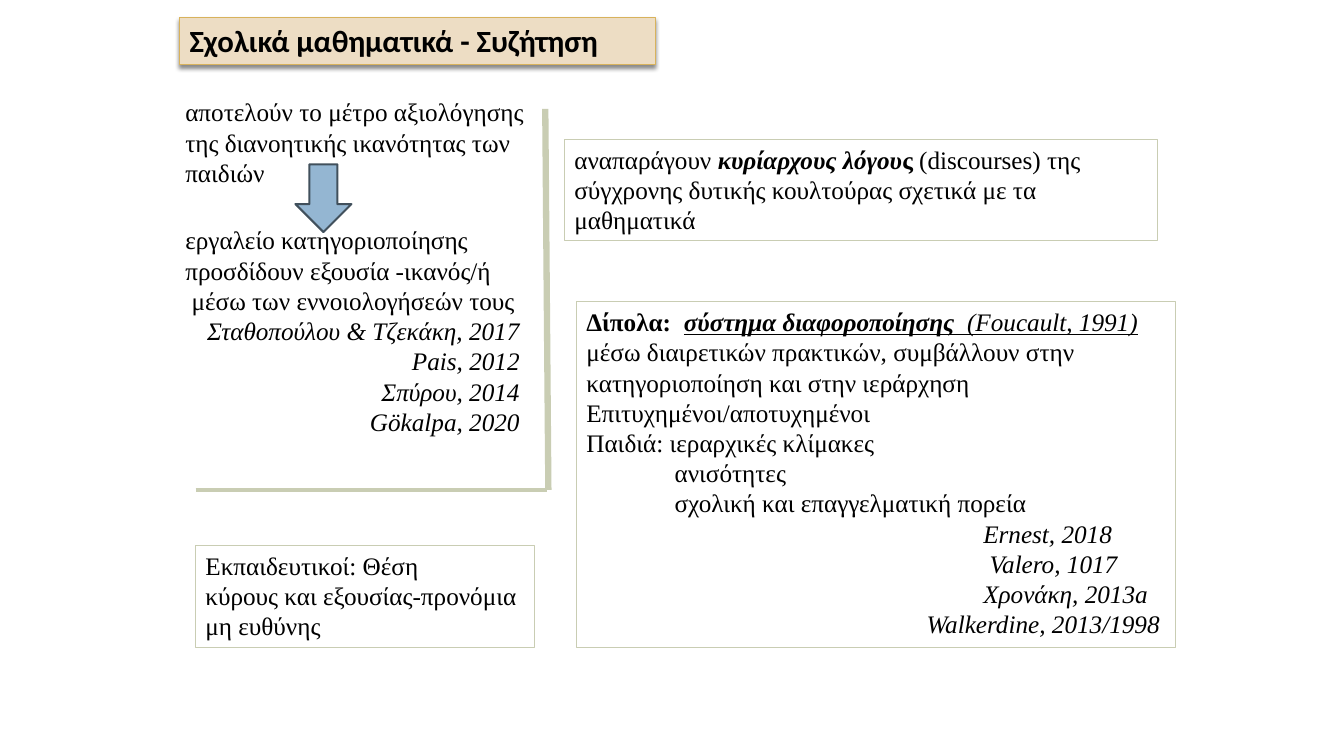
from lxml.etree import SubElement as Sub
from pptx import Presentation
from pptx.dml.color import RGBColor as RGB
from pptx.enum.shapes import MSO_CONNECTOR as LINK, MSO_SHAPE as SHAPE
from pptx.enum.text import MSO_ANCHOR as ANCHOR, MSO_AUTO_SIZE as FIT, PP_ALIGN as ALIGN
from pptx.oxml.ns import qn
from pptx.util import Pt

HUES = {k: RGB.from_string(v) for k, v in {
    "ink": "000000", "sand": "EDDDC4", "gold": "D8B25C",
    "sage": "C9CDB3", "blue": "94B6D2", "slate": "41505C"}.items()}
FLAGS = {"b": "bold", "i": "italic", "u": "underline"}


def write(par, runs, face="Times New Roman", size=18):
    """Add (text, flags) runs, where flags is a mix of b, i and u."""
    for text, flags in runs:
        run = par.add_run()
        run.text = text
        look = {"name": face, "size": Pt(size)}
        look.update({name: key in flags for key, name in FLAGS.items()})
        for name, value in look.items():
            setattr(run.font, name, value)
        run.font.color.rgb = HUES["ink"]


def edge(line, hue, width):
    line.color.rgb = HUES[hue]
    line.width = Pt(width)


deck = Presentation()
deck.slide_width, deck.slide_height = Pt(960), Pt(540)
slide = deck.slides.add_slide(deck.slide_layouts[5])

# Title bar with a soft shadow
title = slide.shapes.title
title.left, title.top, title.width, title.height = map(Pt, (128.2, 12.2, 339.8, 33.8))
title.fill.solid()
title.fill.fore_color.rgb = HUES["sand"]
edge(title.line, "gold", 0.79)
frame = title.text_frame
frame.auto_size, frame.vertical_anchor = FIT.NONE, ANCHOR.TOP
frame.paragraphs[0].alignment = ALIGN.LEFT
write(frame.paragraphs[0], [("Σχολικά μαθηματικά - Συζήτηση", "b")], "Calibri", 22)
glow = Sub(Sub(title.element.spPr, qn("a:effectLst")), qn("a:outerShdw"),
           blurRad=str(Pt(3)), dist=str(Pt(2.4)), dir="5400000", rotWithShape="0")
tone = Sub(glow, qn("a:srgbClr"), val=str(HUES["ink"]))
Sub(tone, qn("a:alpha"), val="45000")

# Down arrow between the two left-hand texts
arrow = slide.shapes.add_shape(SHAPE.DOWN_ARROW, *map(Pt, (211, 117.4, 40, 48.4)))
arrow.shadow.inherit = False
arrow.fill.solid()
arrow.fill.fore_color.rgb = HUES["blue"]
edge(arrow.line, "slate", 1.5)

# Text boxes: place, framed, paragraphs of (indent or "right", runs)
boxes = [
    ((125.3, 65.5, 277.9, 72.7), False, [
        (0, [("αποτελούν το μέτρο αξιολόγησης της διανοητικής ικανότητας των παιδιών", "")])]),
    ((403.2, 99.4, 423.4, 72.7), True, [
        (0, [("αναπαράγουν ", ""), ("κυρίαρχους λόγου", "bi"), ("ς ", "b"),
             ("(discourses) της σύγχρονης δυτικής κουλτούρας σχετικά με τα μαθηματικά", "")])]),
    ((411.8, 215.3, 427.7, 247), True, [
        (0, [("Δίπολα:  ", "b"), ("σύστημα διαφοροποίησης  ", "biu"),
             ("(Foucault, 1991)", "iu")]),
        (0, [("μέσω διαιρετικών πρακτικών, συμβάλλουν στην "
              "κατηγοριοποίηση και στην ιεράρχηση", "")]),
        (0, [("Επιτυχημένοι/αποτυχημένοι", "")]),
        (0, [("Παιδιά: ιεραρχικές κλίμακες", "")]),
        (63, [("ανισότητες", "")]),
        (63, [("σχολική και επαγγελματική πορεία", "")]),
        (283.5, [("Ernest, 2018", "i")]),
        (288, [("Valero, 1017", "i")]),
        (283.5, [("Χρονάκη, 2013a", "i")]),
        (243, [("Walkerdine, 2013/1998", "i")])]),
    ((125.3, 157, 253, 181.4), False, [
        (0, [("εργαλείο κατηγοριοποίησης", "")]),
        (0, [("προσδίδουν εξουσία -ικανός/ή", "")]),
        (4.5, [("μέσω των εννοιολογήσεών τους", "")]),
        ("right", [("Σταθοπούλου & Τζεκάκη, 2017", "i")]),
        ("right", [("Pais, 2012", "i")]),
        ("right", [("Σπύρου, 2014", "i")]),
        ("right", [("Gökalpa, 2020", "i")])]),
    ((139.7, 389.5, 241.9, 72.7), True, [
        (0, [("Εκπαιδευτικοί: Θέση", "")]),
        (0, [("κύρους και εξουσίας-προνόμια", "")]),
        (0, [("μη ευθύνης", "")])]),
]
for place, framed, pars in boxes:
    box = slide.shapes.add_textbox(*map(Pt, place))
    if framed:
        edge(box.line, "sage", 0.75)
    frame = box.text_frame
    frame.word_wrap = True
    for n, (indent, runs) in enumerate(pars):
        par = frame.add_paragraph() if n else frame.paragraphs[0]
        if indent == "right":
            par.alignment = ALIGN.RIGHT
        elif indent:
            par._p.get_or_add_pPr().set("marL", str(Pt(indent)))
        write(par, runs)

# Rules to the right of and below the left column
for ends, width in [((389.5, 77.8, 391.7, 349.9), 4.5),
                    ((139.7, 349.9, 391, 349.9), 3)]:
    rule = slide.shapes.add_connector(LINK.STRAIGHT, *map(Pt, ends))
    edge(rule.line, "sage", width)
    Sub(rule.element.spPr, qn("a:effectLst"))

deck.save("out.pptx")
